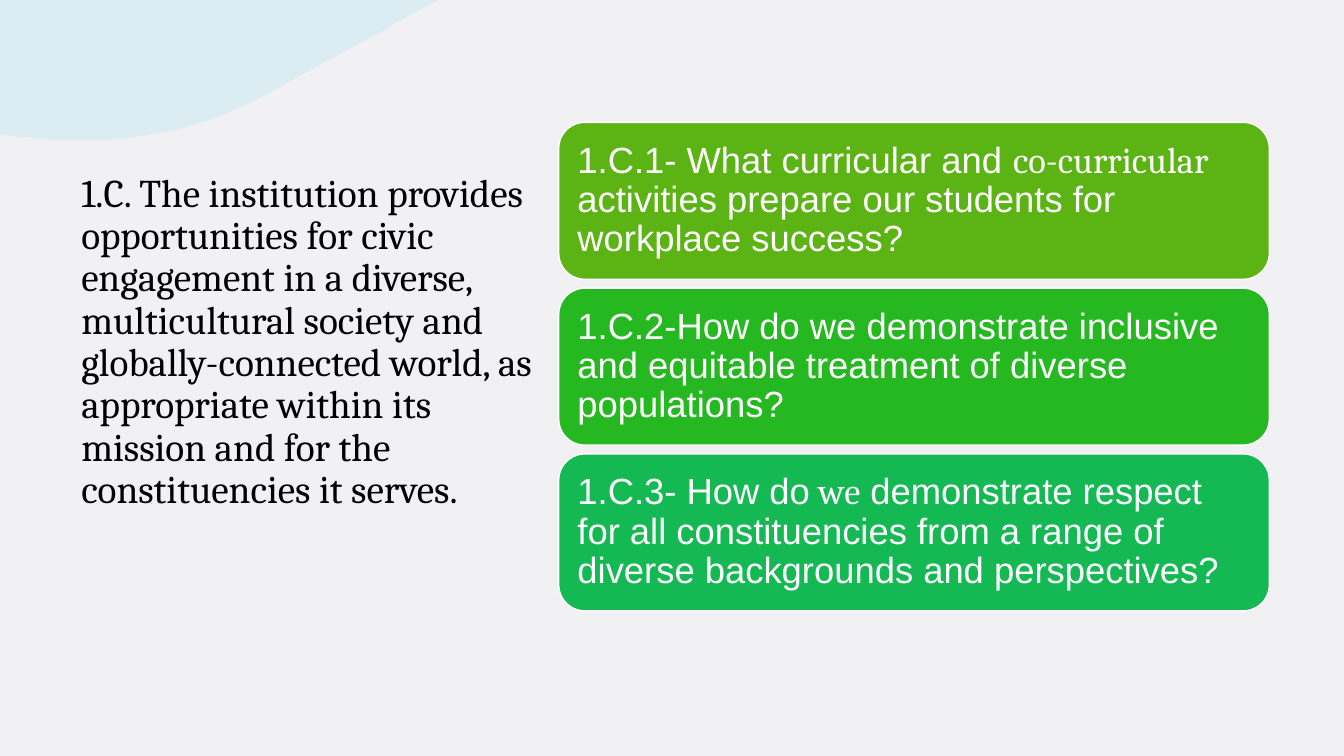
from dataclasses import dataclass

from lxml import etree
from pptx import Presentation
from pptx import util as u
from pptx.dml import color
from pptx.enum import shapes, text
from pptx.oxml import ns


@dataclass(frozen=True)
class Theme:
    """Colours, fonts and type sizes of the page."""
    ground: str = "F1F0F3"
    wave: str = "9CE1F4"
    wave_opacity: int = 25
    ink: str = "000000"
    light: str = "FFFFFF"
    cards: tuple = ("5CB414", "26B821", "14B953")
    serif: str = "Cambria"
    sans: str = "Arial"
    title_size: int = 28
    card_size: int = 26


THEME = Theme()

TITLE = (
    "1.C. The institution provides opportunities for civic engagement in a "
    "diverse, multicultural society and globally-connected world, as "
    "appropriate within its mission and for the constituencies it serves."
)

QUESTIONS = [
    [("1.C.1- What curricular and ", THEME.sans),
     ("co-curricular", THEME.serif),
     (" activities prepare our students for workplace success?", THEME.sans)],
    [("1.C.2-How do we demonstrate inclusive and equitable treatment of "
      "diverse populations?", THEME.sans)],
    [("1.C.3- How do", THEME.sans),
     (" we", THEME.serif),
     (" demonstrate respect for all constituencies from a range of diverse "
      "backgrounds and perspectives?", THEME.sans)],
]

WAVE_CURVES = [
    [(311, 0.7), (271.4, 23), (230.4, 45.4), (193, 66.2)],
    [(193, 66.2), (167, 80.6), (140.4, 90), (113.8, 95)],
    [(113.8, 95), (93.6, 98.6), (73.4, 100.8), (53.3, 100.1)],
    [(53.3, 100.1), (38.2, 100.1), (22.3, 98.6), (7.2, 97.2)],
]


def rgb(value):
    """Turn a hex string into a colour."""
    return color.RGBColor.from_string(value)


def apply_formats(target, formats):
    """Set each named attribute on the target."""
    for name, value in formats.items():
        setattr(target, name, value)


def paint(shape, fill):
    """Give a shape a plain fill without a shadow."""
    shape.shadow.inherit = False
    shape.fill.solid()
    shape.fill.fore_color.rgb = rgb(fill)


def write(frame, spans, size, ink, formats):
    """Write one left-aligned paragraph of (words, font) spans."""
    apply_formats(frame, {"word_wrap": True, **formats})
    para = frame.paragraphs[0]
    apply_formats(para, {"alignment": text.PP_ALIGN.LEFT, "line_spacing": 0.9})
    for words, font in spans:
        span = para.add_run()
        span.text = words
        apply_formats(span.font, {"name": font, "size": u.Pt(size)})
        span.font.color.rgb = rgb(ink)


def curve_points(curve, steps=16):
    """List points along a cubic curve."""
    weights = (1, 3, 3, 1)
    return [
        tuple(sum(w * (1 - t) ** (3 - k) * t ** k * point[axis]
                  for k, (w, point) in enumerate(zip(weights, curve)))
              for axis in (0, 1))
        for t in (step / steps for step in range(steps + 1))
    ]


def add_wave(page, box):
    """Draw the translucent wave in the corner of the box."""
    left, top, width, height = box
    outline = [(width, 0)]
    for curve in WAVE_CURVES:
        outline += curve_points(curve)
    outline.append((0, 95.8))
    builder = page.shapes.build_freeform(0, 0, scale=u.Pt(1))
    builder.add_line_segments(outline, close=True)
    wave = builder.convert_to_shape(u.Pt(left), u.Pt(top))
    wave.height = u.Pt(height)
    paint(wave, THEME.wave)
    wave.line.fill.background()
    for tint in wave.element.xpath("./p:spPr/a:solidFill/a:srgbClr"):
        alpha = etree.SubElement(tint, ns.qn("a:alpha"))
        alpha.set("val", str(THEME.wave_opacity * 1000))


def add_title(page, box):
    """Place the title text at the top of the box."""
    title = page.shapes.add_textbox(*map(u.Pt, box))
    write(title.text_frame, [(TITLE, THEME.serif)], THEME.title_size, THEME.ink,
          {"vertical_anchor": text.MSO_ANCHOR.TOP})


def add_questions(page, box, gap=6.3):
    """Stack the question cards evenly in the box."""
    left, top, width, height = box
    card_height = (height - gap * (len(QUESTIONS) - 1)) / len(QUESTIONS)
    margins = {f"margin_{side}": u.Pt(7.9)
               for side in ("left", "top", "right", "bottom")}
    for index, (spans, fill) in enumerate(zip(QUESTIONS, THEME.cards)):
        card = page.shapes.add_shape(
            shapes.MSO_SHAPE.ROUNDED_RECTANGLE, u.Pt(left),
            u.Pt(top + index * (card_height + gap)), u.Pt(width), u.Pt(card_height))
        paint(card, fill)
        card.line.color.rgb = rgb(THEME.light)
        card.line.width = u.Pt(1)
        write(card.text_frame, spans, THEME.card_size, THEME.light,
              {"vertical_anchor": text.MSO_ANCHOR.MIDDLE, **margins})


def main():
    """Build the deck and save it."""
    deck = Presentation()
    apply_formats(deck, {"slide_width": u.Pt(960), "slide_height": u.Pt(540)})
    page = deck.slides.add_slide(deck.slide_layouts[6])
    page.background.fill.solid()
    page.background.fill.fore_color.rgb = rgb(THEME.ground)
    add_title(page, (51, 120.2, 348.5, 357.8))
    add_wave(page, (0, 0, 313.2, 100.1))
    add_questions(page, (399.1, 87.4, 507.6, 349))
    deck.save("out.pptx")


if __name__ == "__main__":
    main()
